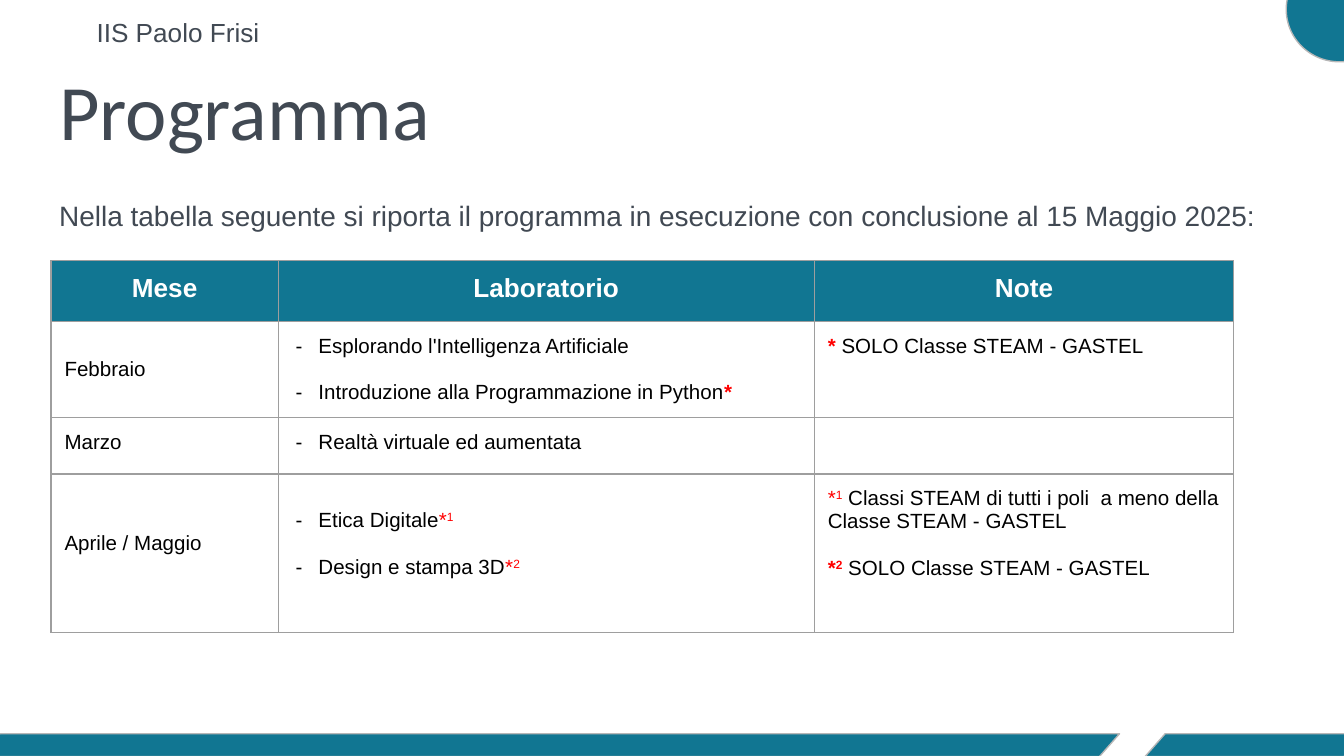
from lxml import etree
from pptx import Presentation
from pptx.dml.color import RGBColor
from pptx.enum.shapes import MSO_SHAPE
from pptx.enum.text import MSO_ANCHOR, MSO_AUTO_SIZE, PP_ALIGN
from pptx.oxml.ns import qn
from pptx.util import Inches, Pt

SLANT, OVAL = MSO_SHAPE.PARALLELOGRAM, MSO_SHAPE.OVAL
TOP, MID, LOW = MSO_ANCHOR.TOP, MSO_ANCHOR.MIDDLE, MSO_ANCHOR.BOTTOM
LEFT, MIDDLE = PP_ALIGN.LEFT, PP_ALIGN.CENTER
WIDE = 10
HIGH = WIDE * 9 / 16
TEAL, SLATE, RED, BLACK = "117692", "414953", "FF0000", "000000"
WHITE, EDGE, GRID = "FFFFFF", "B7B7B7", "9E9E9E"

# Content: a cell is a list of paragraphs, a paragraph a list of runs
TITLE = "Programma"
SCHOOL = "IIS Paolo Frisi"
INTRO = ("Nella tabella seguente si riporta il programma in esecuzione "
         "con conclusione al 15 Maggio 2025:")
HEADS = ["Mese", "Laboratorio", "Note"]
STAR = ("*", {"color": RED})
BOLD = ("*", {"color": RED, "bold": True})
ONLY = " SOLO Classe STEAM - GASTEL"


def high(text, **fmt):
    return (text, {"color": RED, "raised": True, **fmt})


ROWS = [
    ("Febbraio",
     [["Esplorando l'Intelligenza Artificiale"],
      ["Introduzione alla Programmazione in Python", BOLD]],
     [[BOLD, ONLY]]),
    ("Marzo", [["Realtà virtuale ed aumentata"]], []),
    ("Aprile / Maggio",
     [["Etica Digitale", STAR, high("1")],
      ["Design e stampa 3D", STAR, high("2")]],
     [[STAR, high("1"), " Classi STEAM di tutti i poli  a meno della "
                        "Classe STEAM - GASTEL"],
      [BOLD, high("2", bold=True), ONLY]]),
]
COLS = [1.69, 3.99, 3.12]
TALL = [0.45, 0.71, 0.42, 1.18]
LOWER = [0.1, 0.1, 0.15, 0.24]  # bottom margin of each row's centred cells
SHAPES = [  # kind, left, top, width, height
    (SLANT, -0.15, 5.46, 8.48, 0.17),
    (SLANT, 8.52, 5.46, 1.63, 0.17),
    (OVAL, 9.57, -0.32, 0.79, 0.78),
]


def rgb(code):
    return RGBColor.from_string(code)


def box(*sides):
    return [Inches(side) for side in sides]


def dash(para):
    props = para._p.get_or_add_pPr()
    props.set("marL", str(Inches(0.2)))
    props.set("indent", str(Inches(-0.17)))
    tint = etree.SubElement(props, qn("a:buClr"))
    etree.SubElement(tint, qn("a:srgbClr"), val=BLACK)
    etree.SubElement(props, qn("a:buFont"), typeface="Arial")
    etree.SubElement(props, qn("a:buChar"), char="-")


def plain(para):
    props = para._p.get_or_add_pPr()
    props.set("marL", "0")
    props.set("indent", "0")
    etree.SubElement(props, qn("a:buNone"))


def write(frame, paras, size=11, color=BLACK, face="Arial", bold=False,
          align=LEFT, gap=0, mark=None):
    frame.word_wrap = True
    for i, runs in enumerate(paras):
        para = frame.add_paragraph() if i else frame.paragraphs[0]
        if mark:
            mark(para)
        para.alignment = align
        para.space_before = Pt(gap if i else 0)
        for item in runs:
            text, fmt = (item, {}) if isinstance(item, str) else item
            run = para.add_run()
            run.text = text
            font = run.font
            font.size, font.name = Pt(size), face
            font.bold = fmt.get("bold", bold)
            font.color.rgb = rgb(fmt.get("color", color))
            if fmt.get("raised"):
                run._r.get_or_add_rPr().set("baseline", "30000")


def place(shape, area, anchor=TOP):
    shape.left, shape.top, shape.width, shape.height = box(*area)
    frame = shape.text_frame
    frame.auto_size = MSO_AUTO_SIZE.NONE
    frame.vertical_anchor = anchor
    frame.margin_left = frame.margin_right = Inches(0.1)
    frame.margin_top = frame.margin_bottom = Inches(0.1)
    return frame


def style(cell, fill, anchor=TOP, low=0.1):
    if fill:
        cell.fill.solid()
        cell.fill.fore_color.rgb = rgb(fill)
    else:
        cell.fill.background()
    cell.vertical_anchor = anchor
    cell.margin_left = cell.margin_right = cell.margin_top = Inches(0.1)
    cell.margin_bottom = Inches(low)
    props = cell._tc.get_or_add_tcPr()
    for i, side in enumerate(("a:lnL", "a:lnR", "a:lnT", "a:lnB")):
        line = etree.Element(qn(side), w=str(Pt(0.75)))
        solid = etree.SubElement(line, qn("a:solidFill"))
        etree.SubElement(solid, qn("a:srgbClr"), val=GRID)
        props.insert(i, line)


def main():
    deck = Presentation()
    deck.slide_width, deck.slide_height = box(WIDE, HIGH)
    slide = deck.slides.add_slide(deck.slide_layouts[1])
    shapes = slide.shapes

    # Corner disc and foot bars
    for kind, *area in SHAPES:
        shape = shapes.add_shape(kind, *box(*area))
        shape.shadow.inherit = False
        shape.fill.solid()
        shape.fill.fore_color.rgb = rgb(TEAL)
        shape.line.color.rgb = rgb(EDGE)
        shape.line.width = Pt(0.75)
        if kind == SLANT:
            shape.adjustments[0] = 0.88

    # School name, title and opening line
    area = (0.62, 0.02, 2.14, 0.4)
    label = place(shapes.add_textbox(*box(*area)), area)
    write(label, [[SCHOOL]], size=14, color=SLATE)
    head = place(shapes.title, (0.34, 0.35, 9.32, 0.91), LOW)
    write(head, [[TITLE]], size=42, color=SLATE, face="Calibri")
    body = place(slide.placeholders[1], (0.34, 1.34, 9.32, 3.67))
    write(body, [[INTRO]], size=15, color=SLATE, mark=plain)
    body.paragraphs[0].line_spacing = 1.15

    # Programme table
    area = box(0.38, 1.94, sum(COLS), sum(TALL))
    table = shapes.add_table(len(TALL), len(COLS), *area).table
    table.horz_banding = False
    for col, width in zip(table.columns, COLS):
        col.width = Inches(width)
    for row, height in zip(table.rows, TALL):
        row.height = Inches(height)
    for c, text in enumerate(HEADS):
        cell = table.cell(0, c)
        style(cell, TEAL)
        write(cell.text_frame, [[text]], size=14, color=WHITE, bold=True,
              align=MIDDLE)
    for r, (month, labs, notes) in enumerate(ROWS, 1):
        for c, paras in enumerate(([[month]], labs, notes)):
            cell = table.cell(r, c)
            if c < 2:
                style(cell, None, MID, LOWER[r])
            else:
                style(cell, None)
            write(cell.text_frame, paras, gap=12.6,
                  mark=dash if c == 1 else None)
            if not paras:  # keeps the empty cell from stretching its row
                para = cell.text_frame.paragraphs[0]
                etree.SubElement(para._p, qn("a:endParaRPr"), sz="1100")

    deck.save("out.pptx")


if __name__ == "__main__":
    main()
